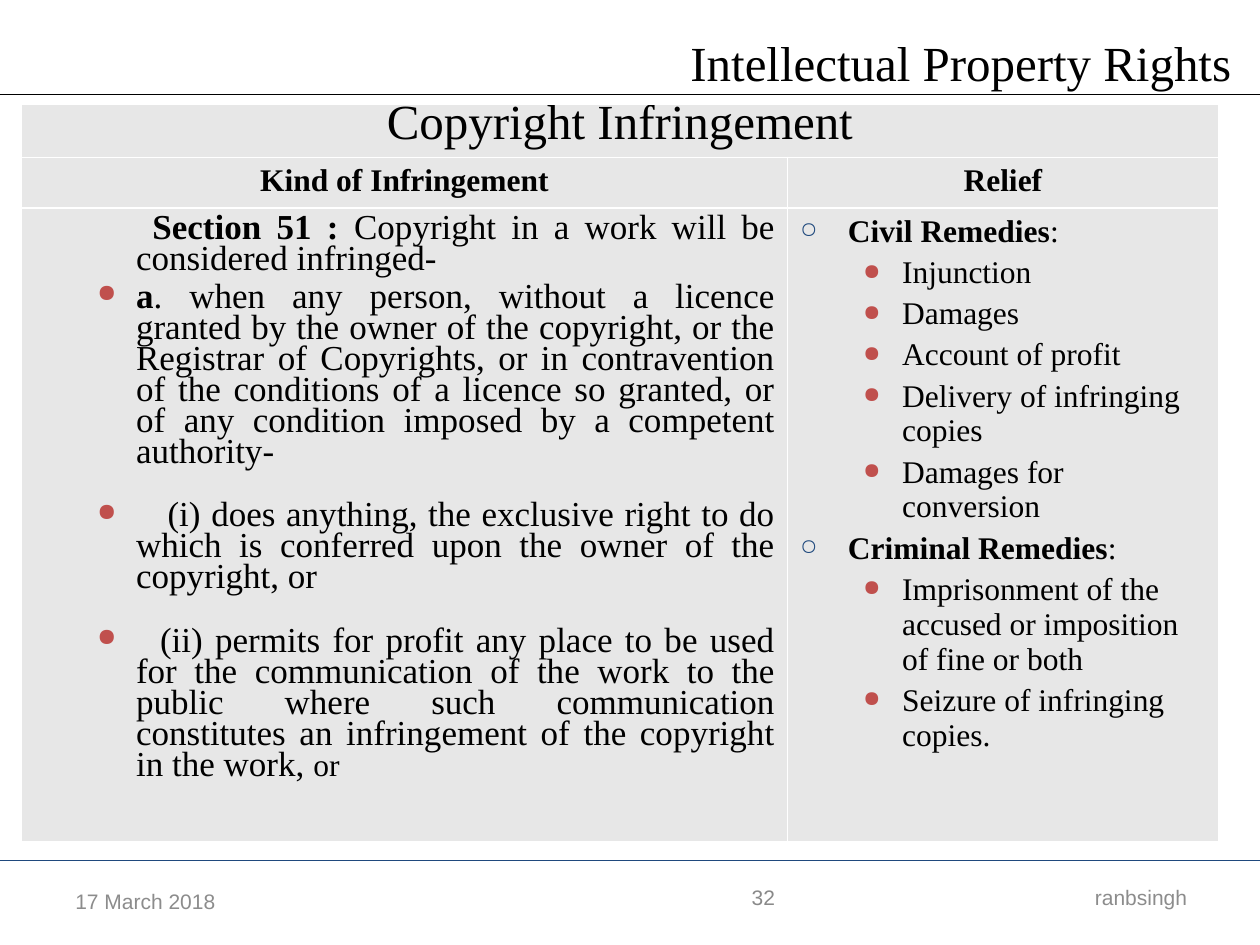
from lxml.etree import SubElement
from pptx import Presentation
from pptx.dml.color import RGBColor
from pptx.enum.shapes import MSO_CONNECTOR
from pptx.enum.text import MSO_ANCHOR, MSO_AUTO_SIZE, PP_ALIGN
from pptx.oxml.ns import qn
from pptx.util import Inches, Pt

COLORS = {"text": "000000", "navy": "1F497D", "red": "C0504D", "cell": "E7E7E7",
          "border": "FFFFFF", "footer": "8C8C8C", "number": "898989"}
SERIF, SANS = "Times New Roman", "Arial"

INFRINGEMENT = [
    (None, 0.13, 0, [("Section 51 : ", True, 20),
                     ("Copyright in a work will be considered infringed-", False, 20)]),
    (None, -0.31, 4, [("a", True, 20),
                      (". when any person, without a licence granted by the owner of the "
                       "copyright, or the Registrar of Copyrights, or in contravention of the "
                       "conditions of a licence so granted, or of any condition imposed by a "
                       "competent authority-", False, 20)]),
    (1.06, -0.31, 18.5, [("\t(i) does anything, the exclusive right to do which is conferred "
                          "upon the owner of the copyright, or", False, 20)]),
    (1, -0.31, 18.5, [("\t(ii) permits for profit any place to be used for the communication of "
                       "the work to the public where such communication constitutes an "
                       "infringement of the copyright in the work, ", False, 20),
                      ("or", False, 18)]),
]
REMEDIES = {
    "Civil Remedies": ["Injunction", "Damages", "Account of profit",
                       "Delivery of infringing copies", "Damages for conversion"],
    "Criminal Remedies": ["Imprisonment of the accused or imposition of fine or both",
                          "Seizure of infringing copies."],
}


def rgb(name):
    """Return the named colour."""
    return RGBColor.from_string(COLORS[name])


def add_run(p, text, size, bold=False, font=SERIF, color="text"):
    """Append a formatted run to a paragraph."""
    r = p.add_run()
    r.text = text
    r.font.name, r.font.size, r.font.bold = font, Pt(size), bold
    r.font.color.rgb = rgb(color)


def next_paragraph(tf):
    """Return the empty first paragraph or a new one."""
    p = tf.paragraphs[0]
    return tf.add_paragraph() if p.runs else p


def set_list(p, left, indent, char=None, color=None, tab=None):
    """Set the indents, bullet and tab stop of a paragraph."""
    pPr = p._p.get_or_add_pPr()
    pPr.set("marL", str(Inches(left)))
    pPr.set("indent", str(Inches(indent)))
    if char:
        clr = SubElement(pPr, qn("a:buClr"))
        SubElement(clr, qn("a:srgbClr"), val=COLORS[color])
        SubElement(pPr, qn("a:buSzPct"), val="70000")
        SubElement(pPr, qn("a:buChar"), char=char)
    else:
        SubElement(pPr, qn("a:buNone"))
    if tab:
        tabs = SubElement(pPr, qn("a:tabLst"))
        SubElement(tabs, qn("a:tab"), pos=str(Inches(tab)), algn="l")


def add_rule(s, y, color):
    """Draw a thin rule across the slide."""
    line = s.shapes.add_connector(MSO_CONNECTOR.STRAIGHT, 0, Inches(y), Inches(10), Inches(y))
    line.line.color.rgb = rgb(color)
    line.line.width = Pt(0.75)
    SubElement(line._element.spPr, qn("a:effectLst"))


def add_title(s, x, y, w, h):
    """Place the slide title."""
    sp = s.shapes.title
    sp.left, sp.top, sp.width, sp.height = Inches(x), Inches(y), Inches(w), Inches(h)
    tf = sp.text_frame
    tf.word_wrap = False
    tf.auto_size = MSO_AUTO_SIZE.SHAPE_TO_FIT_TEXT
    tf.vertical_anchor = MSO_ANCHOR.TOP
    p = tf.paragraphs[0]
    p.alignment = PP_ALIGN.LEFT
    add_run(p, "Intellectual Property Rights", 28)


def add_footer(s, text, x, y, w, h, align, color="footer"):
    """Place one footer text."""
    tf = s.shapes.add_textbox(Inches(x), Inches(y), Inches(w), Inches(h)).text_frame
    tf.word_wrap = True
    tf.vertical_anchor = MSO_ANCHOR.MIDDLE
    p = tf.paragraphs[0]
    p.alignment = align
    add_run(p, text, 12, font=SANS, color=color)


def style_cell(cell):
    """Give a cell its thin borders and fill."""
    tcPr = cell._tc.get_or_add_tcPr()
    for side in ("lnL", "lnR", "lnT", "lnB"):
        ln = SubElement(tcPr, qn(f"a:{side}"), w=str(Pt(1)))
        fill = SubElement(ln, qn("a:solidFill"))
        SubElement(fill, qn("a:srgbClr"), val=COLORS["border"])
    cell.fill.solid()
    cell.fill.fore_color.rgb = rgb("cell")


def fill_heading(cell, text, size, bold):
    """Write a centred heading in a cell."""
    p = cell.text_frame.paragraphs[0]
    p.alignment = PP_ALIGN.CENTER
    add_run(p, text, size, bold)
    return p


def fill_infringement(tf):
    """Write the justified section text."""
    for tab, indent, before, runs in INFRINGEMENT:
        p = next_paragraph(tf)
        p.level = 1
        p.alignment = PP_ALIGN.JUSTIFY
        set_list(p, 0.81, indent, "●" if indent < 0 else None, "red", tab)
        p.line_spacing = 0.8
        p.space_before = Pt(before)
        for text, bold, size in runs:
            add_run(p, text, size, bold)


def fill_remedies(tf):
    """Write the two-level list of remedies."""
    for i, (heading, items) in enumerate(REMEDIES.items()):
        p = next_paragraph(tf)
        set_list(p, 0.38, -0.38, "○", "navy")
        p.space_before = Pt(3.6 if i else 0)
        add_run(p, heading, 18, True)
        add_run(p, ":", 18)
        for item in items:
            p = next_paragraph(tf)
            p.level = 1
            set_list(p, 0.81, -0.31, "●", "red")
            p.space_before = Pt(3.6)
            add_run(p, item, 18)


def add_infringement_table(s, x, y, w, h):
    """Place the table of infringements and reliefs."""
    table = s.shapes.add_table(3, 2, Inches(x), Inches(y), Inches(w), Inches(h)).table
    table.first_row = table.horz_banding = False
    for col, share in zip(table.columns, (0.64, 0.36)):
        col.width = Inches(w * share)
    for row, height in zip(table.rows, (0.42, 0.4, h - 0.82)):
        row.height = Inches(height)
    for cell in table.iter_cells():
        style_cell(cell)
    table.cell(0, 0).merge(table.cell(0, 1))
    fill_heading(table.cell(0, 0), "Copyright Infringement", 28, False).line_spacing = 0.65
    for c, text in enumerate(("Kind of Infringement", "Relief")):
        fill_heading(table.cell(1, c), text, 18, True)
    fill_infringement(table.cell(2, 0).text_frame)
    fill_remedies(table.cell(2, 1).text_frame)


def main():
    """Build and save the slide."""
    prs = Presentation()
    prs.slide_width, prs.slide_height = Inches(10), Inches(7.5)
    s = prs.slides.add_slide(prs.slide_layouts[5])
    add_rule(s, 0.75, "text")
    add_title(s, 5.38, 0.21, 4.54, 0.57)
    add_rule(s, 6.83, "navy")
    add_footer(s, "17 March 2018", 0.5, 6.95, 2.33, 0.4, PP_ALIGN.LEFT)
    add_footer(s, "ranbsingh", 6.67, 6.92, 2.85, 0.4, PP_ALIGN.RIGHT)
    add_footer(s, "32", 3.92, 6.92, 2.33, 0.4, PP_ALIGN.RIGHT, "number")
    add_infringement_table(s, 0.17, 0.83, 9.5, 5.85)
    prs.save("out.pptx")


if __name__ == "__main__":
    main()
